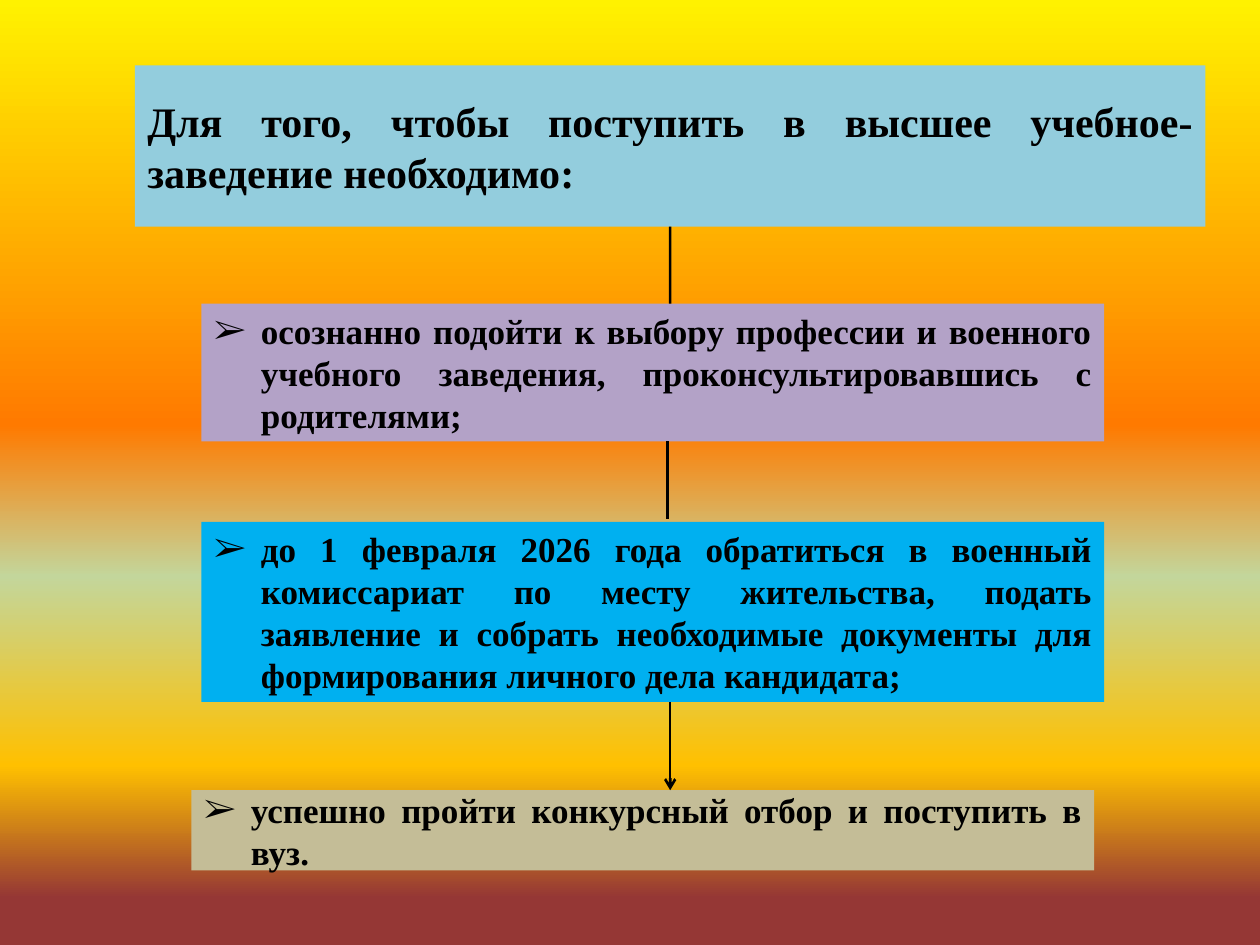
from lxml import etree
from pptx import Presentation
from pptx.dml.color import RGBColor
from pptx.enum.shapes import MSO_CONNECTOR, MSO_SHAPE
from pptx.enum.text import MSO_ANCHOR, PP_ALIGN
from pptx.oxml.ns import qn
from pptx.util import Cm, Pt

RECTANGLE = MSO_SHAPE.RECTANGLE
STRAIGHT = MSO_CONNECTOR.STRAIGHT
MIDDLE = MSO_ANCHOR.MIDDLE
JUSTIFY = PP_ALIGN.JUSTIFY
BOTTOM_SIDE = 2

FONT = "Times New Roman"
COLOURS = {
    "ink": "000000",
    "header": "93CDDD",
    "choice": "B3A2C7",
    "documents": "00B0F0",
    "contest": "C4BD97",
}
BACKGROUND_STOPS = {0: "FFF200", 45: "FF7A00", 61: "C3D69B", 81: "FFC000", 95: "953735"}
INK = RGBColor.from_string(COLOURS["ink"])

presentation = Presentation()
presentation.slide_width, presentation.slide_height = Cm(25.4), Cm(19.05)
slide = presentation.slides.add_slide(presentation.slide_layouts[6])

# Background: vertical gradient with five stops
background_fill = slide.background.fill
background_fill.gradient()
background_fill.gradient_angle = 270
stop_list = slide.element.find(".//" + qn("a:gsLst"))
for stop in list(stop_list):
    stop_list.remove(stop)
for percent, colour in BACKGROUND_STOPS.items():
    stop = etree.SubElement(stop_list, qn("a:gs"), pos=str(percent * 1000))
    etree.SubElement(stop, qn("a:srgbClr"), val=colour)

# Heading and steps: key, left, top, width, height, size, bulleted, text
boxes = [
    ("header", 2.72, 1.32, 21.58, 3.25, 24, False,
     "Для того, чтобы поступить в высшее учебное-заведение необходимо:"),
    ("choice", 4.06, 6.12, 18.2, 2.78, 20, True,
     "осознанно подойти к выбору профессии и военного учебного заведения, "
     "проконсультировавшись с родителями;"),
    ("documents", 4.06, 10.52, 18.2, 3.63, 20, True,
     "до 1 февраля 2026 года обратиться в военный комиссариат по месту жительства, "
     "подать заявление и собрать необходимые документы для формирования "
     "личного дела кандидата;"),
    ("contest", 3.86, 15.93, 18.2, 1.62, 20, True,
     "успешно пройти конкурсный отбор и поступить в вуз."),
]
shapes = {}
for key, left, top, width, height, size, bulleted, text in boxes:
    shape = slide.shapes.add_shape(RECTANGLE, Cm(left), Cm(top), Cm(width), Cm(height))
    shape.shadow.inherit = False
    shape.fill.solid()
    shape.fill.fore_color.rgb = RGBColor.from_string(COLOURS[key])
    shape.line.fill.background()
    shape.text_frame.word_wrap = True
    shape.text_frame.vertical_anchor = MIDDLE

    paragraph = shape.text_frame.paragraphs[0]
    paragraph.alignment = JUSTIFY
    run = paragraph.add_run()
    run.text = text
    run.font.color.rgb = INK
    font_format = {"name": FONT, "size": Pt(size), "bold": True}
    for attribute, value in font_format.items():
        setattr(run.font, attribute, value)

    if bulleted:
        properties = paragraph._p.get_or_add_pPr()
        properties.set("marL", str(Cm(0.95)))
        properties.set("indent", str(-Cm(0.95)))
        etree.SubElement(properties, qn("a:buFont"), typeface=FONT)
        etree.SubElement(properties, qn("a:buChar"), char="➢")
    shapes[key] = shape

# Links between the boxes: x, top, bottom, box joined at the start, arrowhead
links = [
    (13.51, 4.57, 6.12, "header", False),
    (13.46, 8.9, 10.46, None, False),
    (13.51, 14.15, 15.93, None, True),
]
for x, top, bottom, start_box, arrowhead in links:
    connector = slide.shapes.add_connector(STRAIGHT, Cm(x), Cm(top), Cm(x), Cm(bottom))
    if start_box:
        connector.begin_connect(shapes[start_box], BOTTOM_SIDE)
    connector.line.width = Pt(1.5)
    connector.line.color.rgb = INK
    if arrowhead:
        etree.SubElement(connector.line._get_or_add_ln(), qn("a:tailEnd"), type="arrow")
    etree.SubElement(connector._element.spPr, qn("a:effectLst"))

presentation.save("out.pptx")
